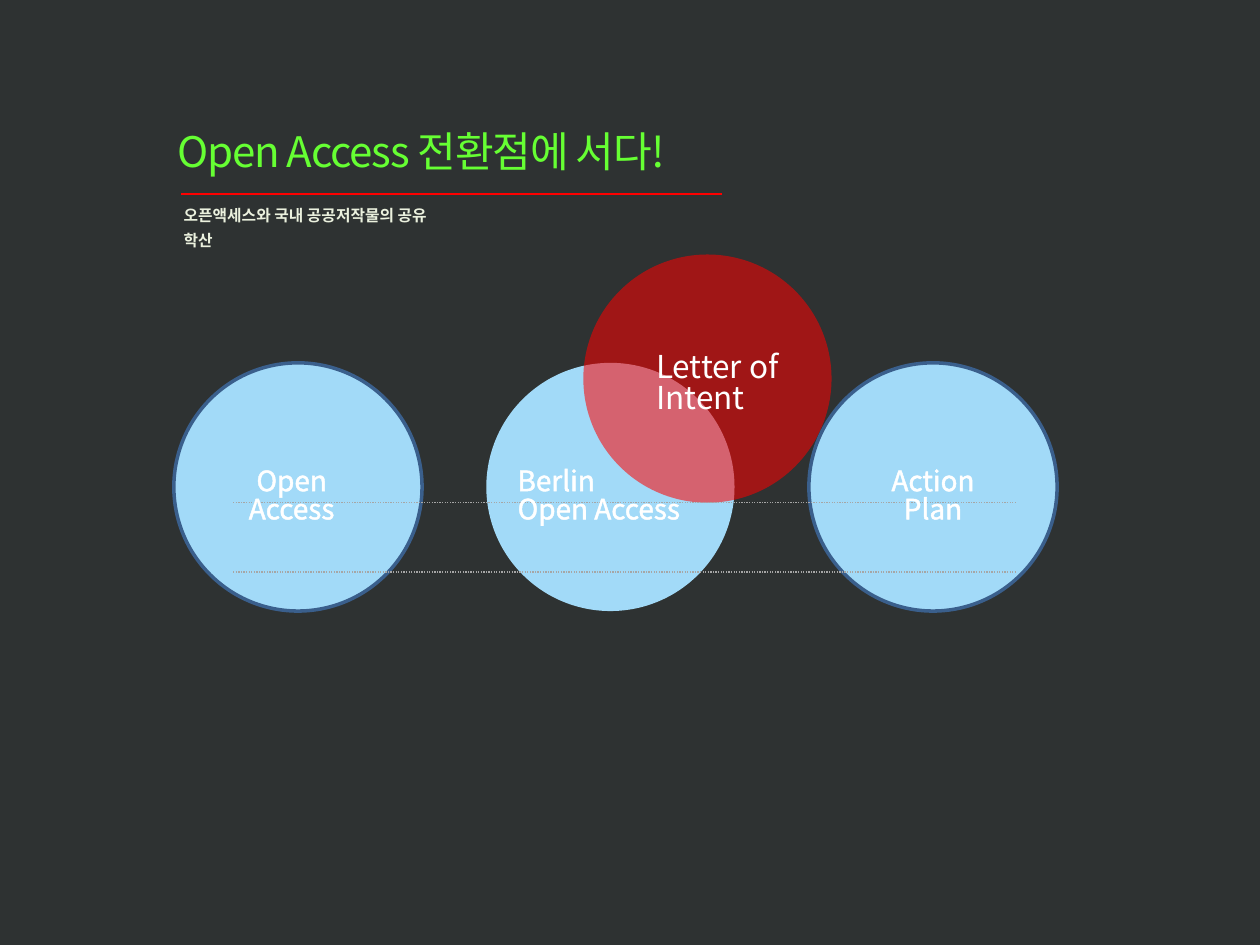
import dataclasses

import pptx
import pptx.dml.color
import pptx.enum.dml
import pptx.enum.shapes
import pptx.enum.text
import pptx.oxml.ns
import pptx.util
from lxml import etree

ALIGN = pptx.enum.text.PP_ALIGN


@dataclasses.dataclass(frozen=True)
class Theme:
    background: str = "2E3232"
    title: str = "66FF33"
    subtitle: str = "EBF1DE"
    label: str = "FFFFFF"
    circle: str = "A2DAF8"
    circle_edge: str = "3A5F8C"
    accent: str = "FF0000"
    guide: str = "A6A6A6"
    font: str = "Noto Sans CJK KR"
    title_size: float = 24
    intent_size: float = 18
    label_size: float = 16
    subtitle_size: float = 9
    line_spacing: float = 0.84


def rgb(colour):
    return pptx.dml.color.RGBColor.from_string(colour)


def add_child(parent, tag, **attributes):
    return etree.SubElement(parent, pptx.oxml.ns.qn(tag), attributes)


class CircleSlide:
    """Places elements on a grid of 10 columns by 7.5 rows."""

    COLUMNS, ROWS = 10, 7.5

    def __init__(self, deck, theme):
        self.theme = theme
        self.column = deck.slide_width / self.COLUMNS
        self.row = deck.slide_height / self.ROWS
        self.slide = deck.slides.add_slide(deck.slide_layouts[5])
        self.slide.background.fill.solid()
        self.slide.background.fill.fore_color.rgb = rgb(theme.background)

    def place(self, left, top, width, height):
        return (round(left * self.column), round(top * self.row),
                round(width * self.column), round(height * self.row))

    def set_text(self, holder, text, size, colour, align, outline=None, bold=False, spacing=None):
        frame = holder.text_frame
        frame.text = text
        frame.word_wrap = True
        frame.auto_size = pptx.enum.text.MSO_AUTO_SIZE.SHAPE_TO_FIT_TEXT
        frame.vertical_anchor = pptx.enum.text.MSO_ANCHOR.TOP
        for paragraph in frame.paragraphs:
            paragraph.alignment = align
            paragraph.line_spacing = spacing or self.theme.line_spacing
            for run in paragraph.runs:
                run.font.size = pptx.util.Pt(size)
                run.font.bold = bold
                run.font.color.rgb = rgb(colour)
                run.font.name = self.theme.font
                properties = run.font._element
                east_asian = etree.Element(pptx.oxml.ns.qn("a:ea"), typeface=self.theme.font)
                properties.find(pptx.oxml.ns.qn("a:latin")).addnext(east_asian)
                if outline:
                    edge = etree.Element(pptx.oxml.ns.qn("a:ln"),
                                         w=str(int(pptx.util.Pt(outline))))
                    add_child(add_child(edge, "a:solidFill"), "a:srgbClr", val=colour)
                    properties.insert(0, edge)

    def title(self, text, *box):
        heading = self.slide.shapes.title
        heading.left, heading.top, heading.width, heading.height = self.place(*box)
        self.set_text(heading, text, self.theme.title_size, self.theme.title,
                      ALIGN.JUSTIFY, outline=0.25)
        for run in heading.text_frame.paragraphs[0].runs:
            run.font._element.set("spc", "-70")

    def text(self, text, box, size, colour, align=ALIGN.LEFT, **style):
        holder = self.slide.shapes.add_textbox(*self.place(*box))
        self.set_text(holder, text, size, colour, align, **style)

    def line(self, left, right, top, colour, dash=None):
        x, y, width, _ = self.place(left, top, right - left, 0)
        rule = self.slide.shapes.add_connector(
            pptx.enum.shapes.MSO_CONNECTOR.STRAIGHT, x, y, x + width, y)
        rule.line.color.rgb = rgb(colour)
        rule.line.width = pptx.util.Pt(0.75)
        if dash:
            rule.line.dash_style = dash
        add_child(rule._element.spPr, "a:effectLst")

    def circle(self, left, top, diameter, colour, edge=None, opacity=None):
        disc = self.slide.shapes.add_shape(
            pptx.enum.shapes.MSO_SHAPE.OVAL, *self.place(left, top, diameter, diameter))
        disc.shadow.inherit = False
        disc.fill.solid()
        disc.fill.fore_color.rgb = rgb(colour)
        if opacity:
            tint = disc._element.spPr.find(".//" + pptx.oxml.ns.qn("a:srgbClr"))
            add_child(tint, "a:alpha", val=str(opacity * 1000))
        if edge:
            disc.line.color.rgb = rgb(edge)
            disc.line.width = pptx.util.Pt(2)
        else:
            disc.line.fill.background()


def main():
    deck = pptx.Presentation()
    deck.slide_width = pptx.util.Inches(10)
    deck.slide_height = pptx.util.Inches(7.5)
    theme = Theme()
    page = CircleSlide(deck, theme)

    # Heading
    page.title("Open Access 전환점에 서다!", 1.31, 1.01, 4.49, 0.5)
    page.line(1.44, 5.73, 1.54, theme.accent)

    # Circles, with the letter of intent overlapping the middle one
    diameter, circle_top = 1.97, 2.88
    page.circle(1.38, circle_top, diameter, theme.circle, edge=theme.circle_edge)
    page.circle(3.86, circle_top, diameter, theme.circle)
    page.circle(4.63, 2.02, diameter, theme.accent, opacity=55)
    page.circle(6.42, circle_top, diameter, theme.circle, edge=theme.circle_edge)

    # Dotted guides
    for guide_top in (4.54, 3.99):
        page.line(1.85, 8.07, guide_top, theme.guide,
                  dash=pptx.enum.dml.MSO_LINE.ROUND_DOT)

    # Circle labels
    for label, left, width, align in (
        ("Open Access", 1.71, 1.21, ALIGN.CENTER),
        ("Berlin\nOpen Access", 4.01, 1.7, ALIGN.LEFT),
        ("Action Plan", 6.8, 1.21, ALIGN.CENTER),
    ):
        page.text(label, (left, 3.67, width, 0.64), theme.label_size, theme.label,
                  align, outline=0.75)
    page.text("Letter of Intent", (5.11, 2.75, 1.7, 0.71), theme.intent_size, theme.label)

    # Subtitle
    page.text("오픈액세스와 국내 공공저작물의 공유 학산", (1.36, 1.54, 2.33, 0.3),
              theme.subtitle_size, theme.subtitle, bold=True, spacing=pptx.util.Pt(14))

    deck.save("out.pptx")


if __name__ == "__main__":
    main()
